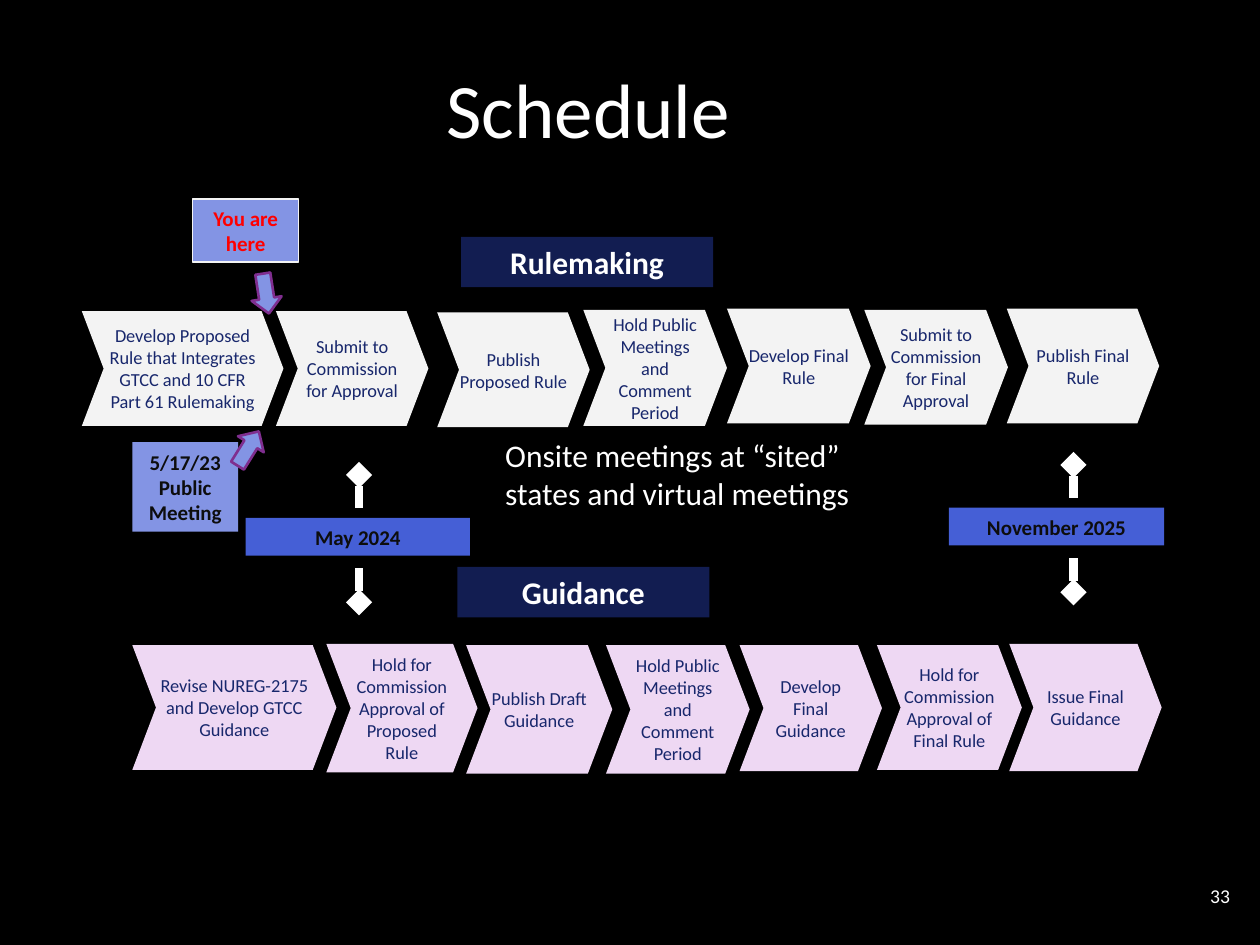
import pptx
import pptx.dml.color
import pptx.enum.shapes
import pptx.enum.text
import pptx.oxml.ns
import pptx.util
from lxml import etree
from pptx.util import Inches

SHAPE = pptx.enum.shapes.MSO_SHAPE
ALIGN = pptx.enum.text.PP_ALIGN
MIDDLE = pptx.enum.text.MSO_ANCHOR.MIDDLE
WHITE, NAVY, INK = "FFFFFF", "18276C", "0D0D0D"
PALE, LILAC, PERIWINKLE = "F3F3F3", "EED8F3", "8394E4"
BLUE, MIDNIGHT, PURPLE = "455FD6", "121D51", "7F2E8F"

# Content: each step is text, left, top, width, height
RULEMAKING_STEPS = [
    ("Develop Proposed Rule that Integrates GTCC and 10 CFR Part 61 Rulemaking", 0.65, 2.47, 1.6, 0.91),
    ("Submit to Commission for Approval", 2.19, 2.47, 1.21, 0.91),
    ("Publish Proposed Rule", 3.47, 2.48, 1.21, 0.91),
    ("Hold Public Meetings and Comment Period", 4.63, 2.46, 1.14, 0.92),
    ("Develop Final Rule", 5.77, 2.45, 1.14, 0.91),
    ("Submit to Commission for Final Approval", 6.86, 2.46, 1.14, 0.91),
    ("Publish Final Rule", 7.99, 2.45, 1.21, 0.91),
]
GUIDANCE_STEPS = [
    ("Revise NUREG-2175 and Develop GTCC Guidance", 1.05, 5.12, 1.62, 0.99),
    ("Hold for Commission Approval of Proposed Rule", 2.59, 5.11, 1.2, 1.02),
    ("Publish Draft Guidance", 3.7, 5.12, 1.16, 1.02),
    ("Hold Public Meetings and Comment Period", 4.81, 5.12, 1.14, 1.02),
    ("Develop Final Guidance", 5.87, 5.12, 1.13, 1.0),
    ("Hold for Commission Approval of Final Rule", 6.96, 5.12, 1.15, 0.99),
    ("Issue Final Guidance", 8.01, 5.11, 1.21, 1.01),
]
# Text, box, fill, text colour, text size, outline
LABELS = [
    ("Rulemaking", (3.66, 1.88, 2, 0.4), MIDNIGHT, WHITE, 18, None),
    ("Guidance", (3.63, 4.5, 2, 0.4), MIDNIGHT, WHITE, 18, None),
    ("May 2024", (1.95, 4.11, 1.78, 0.3), BLUE, INK, 12, None),
    ("November 2025", (7.53, 4.03, 1.71, 0.3), BLUE, INK, 12, None),
    ("5/17/23 Public Meeting", (1.05, 3.51, 0.84, 0.71), PERIWINKLE, INK, 12, None),
    ("You are here", (1.53, 1.58, 0.84, 0.5), PERIWINKLE, "FF0000", 12, PALE),
]
# Centre line and top of each date label
DATE_MARKERS = [(2.85, 4.11), (8.52, 4.03)]
# Left, top, rotation
POINTERS = [(1.81, 3.44, 301.9), (1.95, 2.21, 81.2)]


def color(value):
    return pptx.dml.color.RGBColor.from_string(value)


def write(shape, text, size, ink, bold=False, align=ALIGN.CENTER, anchor=MIDDLE, insets=(0.1, 0.05)):
    frame = shape.text_frame
    frame.word_wrap = True
    frame.vertical_anchor = anchor
    frame.margin_left = frame.margin_right = Inches(insets[0])
    frame.margin_top = frame.margin_bottom = Inches(insets[1])
    paragraph = frame.paragraphs[0]
    paragraph.alignment = align
    run = paragraph.add_run()
    run.text = text
    run.font.name = "Calibri"
    run.font.size = pptx.util.Pt(size)
    run.font.bold = bold
    run.font.color.rgb = color(ink)
    return paragraph


def add_box(slide, kind, box, fill, outline=None, width=0.75):
    shape = slide.shapes.add_shape(kind, *map(Inches, box))
    shape.shadow.inherit = False
    shape.fill.solid()
    shape.fill.fore_color.rgb = color(fill)
    if outline:
        shape.line.color.rgb = color(outline)
        shape.line.width = pptx.util.Pt(width)
    else:
        shape.line.fill.background()
    return shape


def add_diamond_line(slide, x, start, end):
    line = slide.shapes.add_connector(
        pptx.enum.shapes.MSO_CONNECTOR.STRAIGHT, *map(Inches, (x, start, x, end)))
    line.line.color.rgb = color(WHITE)
    line.line.width = pptx.util.Pt(5)
    qn = pptx.oxml.ns.qn
    etree.SubElement(line.line._get_or_add_ln(), qn("a:tailEnd"), type="diamond")
    etree.SubElement(line._element.spPr, qn("a:effectLst"))


def main():
    presentation = pptx.Presentation()
    presentation.slide_width, presentation.slide_height = Inches(10), Inches(7.5)
    slide = presentation.slides.add_slide(presentation.slide_layouts[5])
    slide.background.fill.solid()
    slide.background.fill.fore_color.rgb = color("000000")

    # Title
    title = slide.shapes.title
    title.left, title.top, title.width, title.height = map(Inches, (0.17, 0.23, 9, 1.25))
    write(title, "Schedule", 44, WHITE)

    # Process rows
    for steps, fill in ((RULEMAKING_STEPS, PALE), (GUIDANCE_STEPS, LILAC)):
        for text, *box in steps:
            chevron = add_box(slide, SHAPE.CHEVRON, box, fill)
            chevron.adjustments[0] = 0.19
            write(chevron, text, 10.5, NAVY, insets=(0, 0.05))

    # Headings, dates and callouts
    for text, box, fill, ink, size, outline in LABELS:
        label = add_box(slide, SHAPE.RECTANGLE, box, fill, outline)
        write(label, text, size, ink, bold=True)

    # Lines from each date towards both rows
    for x, top in DATE_MARKERS:
        add_diamond_line(slide, x, top - 0.08, top - 0.34)
        add_diamond_line(slide, x, top + 0.4, top + 0.67)

    # Callout arrows
    for left, top, rotation in POINTERS:
        arrow = add_box(slide, SHAPE.RIGHT_ARROW, (left, top, 0.32, 0.24), PERIWINKLE, PURPLE, 1.5)
        arrow.rotation = rotation

    # Meeting note and slide number
    note = slide.shapes.add_textbox(*map(Inches, (3.19, 3.42, 4.03, 0.73)))
    paragraph = write(note, "Onsite meetings at “sited” states and virtual meetings", 18, WHITE,
                      align=ALIGN.LEFT, anchor=pptx.enum.text.MSO_ANCHOR.TOP, insets=(0.07, 0.04))
    paragraph._p.get_or_add_pPr().set("marL", str(Inches(0.75)))
    number = slide.shapes.add_textbox(*map(Inches, (9.17, 6.79, 0.69, 0.63)))
    write(number, "33", 11.2, WHITE, align=ALIGN.RIGHT)

    presentation.save("out.pptx")


if __name__ == "__main__":
    main()
